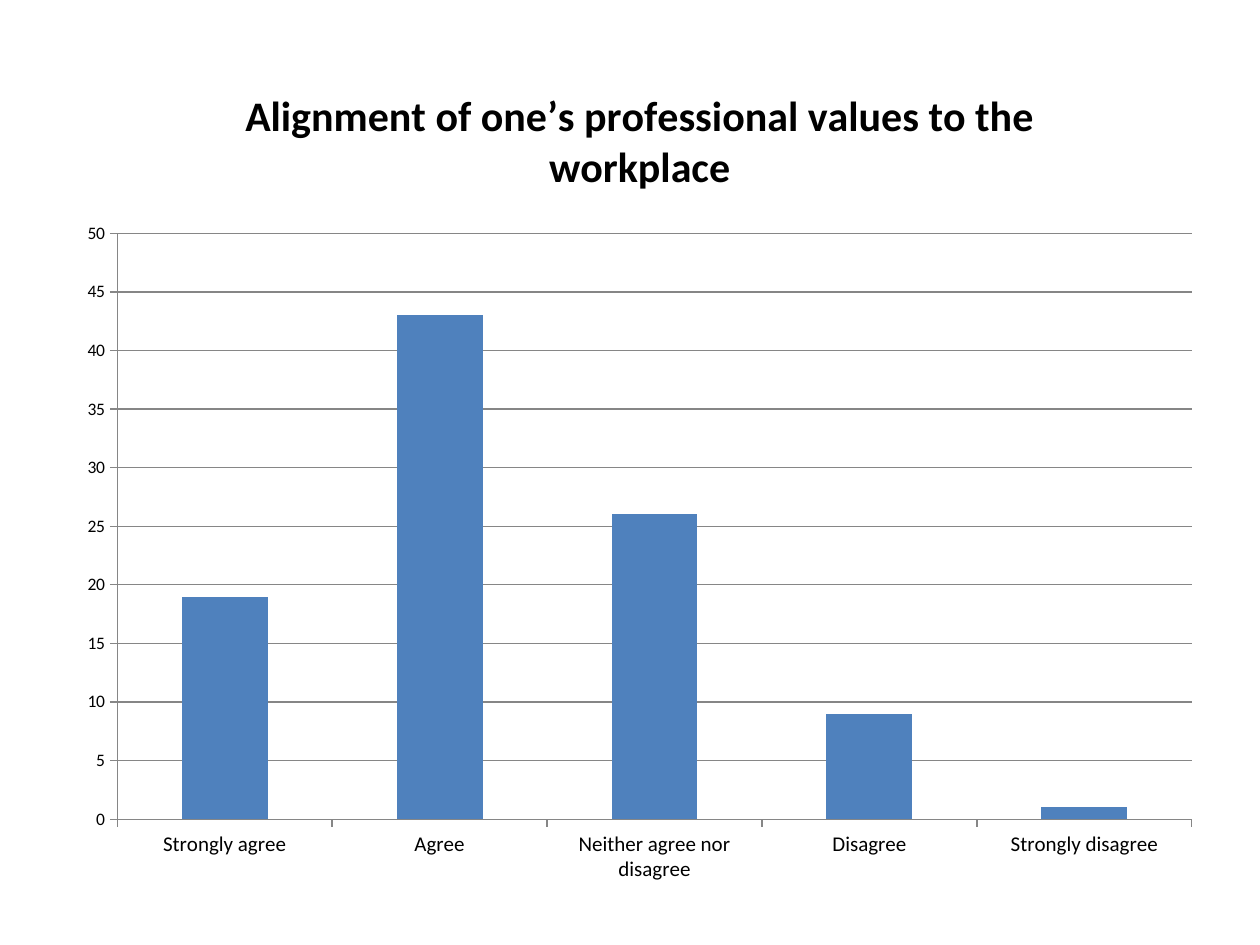
from dataclasses import dataclass

from pptx import Presentation
from pptx.chart.data import CategoryChartData
from pptx.dml.color import RGBColor
from pptx.enum.chart import XL_CHART_TYPE, XL_TICK_MARK
from pptx.util import Cm, Pt

COLUMNS = XL_CHART_TYPE.COLUMN_CLUSTERED
OUTSIDE = XL_TICK_MARK.OUTSIDE
NO_TICK = XL_TICK_MARK.NONE

BLACK = RGBColor(0x00, 0x00, 0x00)
BLUE = RGBColor(0x4F, 0x81, 0xBD)
GREY = RGBColor(0x86, 0x86, 0x86)

TITLE = "Alignment of one’s professional values to the workplace"
BASE_FONT = {"name": "Calibri", "size": Pt(10), "bold": False}
TITLE_FONT = {"name": "Calibri", "size": Pt(24), "bold": True}
CATEGORY_FONT = {"size": Pt(12)}
VALUE_FONT = {"size": Pt(10)}
VALUE_SCALE = {"minimum_scale": 0, "maximum_scale": 50, "major_unit": 5}
TICKS = {"major_tick_mark": OUTSIDE, "minor_tick_mark": NO_TICK}


@dataclass(frozen=True)
class Response:
    label: str
    count: int


RESPONSES = (
    Response("Strongly agree", 19),
    Response("Agree", 43),
    Response("Neither agree nor disagree", 26),
    Response("Disagree", 9),
    Response("Strongly disagree", 1),
)


def apply_format(target, values: dict) -> None:
    for name, value in values.items():
        setattr(target, name, value)


def format_font(font, values: dict) -> None:
    apply_format(font, values)
    font.color.rgb = BLACK


def format_line(line) -> None:
    line.color.rgb = GREY
    line.width = Pt(0.75)


def format_axis(axis, font_values: dict) -> None:
    apply_format(axis, TICKS)
    format_font(axis.tick_labels.font, font_values)
    format_line(axis.format.line)


def add_response_chart(page, responses: tuple[Response, ...]) -> None:
    data = CategoryChartData()
    data.categories = [response.label for response in responses]
    data.add_series("Series 1", [response.count for response in responses])
    frame = page.shapes.add_chart(
        COLUMNS, Cm(1.3), Cm(1.12), Cm(23.19), Cm(16.99), data
    )
    chart = frame.chart
    chart.has_legend = False
    format_font(chart.font, BASE_FONT)

    chart.has_title = True
    chart.chart_title.include_in_layout = False
    para = chart.chart_title.text_frame.paragraphs[0]
    span = para.add_run()
    span.text = TITLE
    format_font(span.font, TITLE_FONT)

    format_axis(chart.category_axis, CATEGORY_FONT)
    format_axis(chart.value_axis, VALUE_FONT)
    apply_format(chart.value_axis, VALUE_SCALE)
    format_line(chart.value_axis.major_gridlines.format.line)

    plot = chart.plots[0]
    apply_format(plot, {"gap_width": 150, "vary_by_categories": False})
    fill = plot.series[0].format.fill
    fill.solid()
    fill.fore_color.rgb = BLUE


def main() -> None:
    deck = Presentation()
    apply_format(deck, {"slide_width": Cm(25.4), "slide_height": Cm(19.05)})
    page = deck.slides.add_slide(deck.slide_layouts[6])
    add_response_chart(page, RESPONSES)
    deck.save("out.pptx")


if __name__ == "__main__":
    main()
